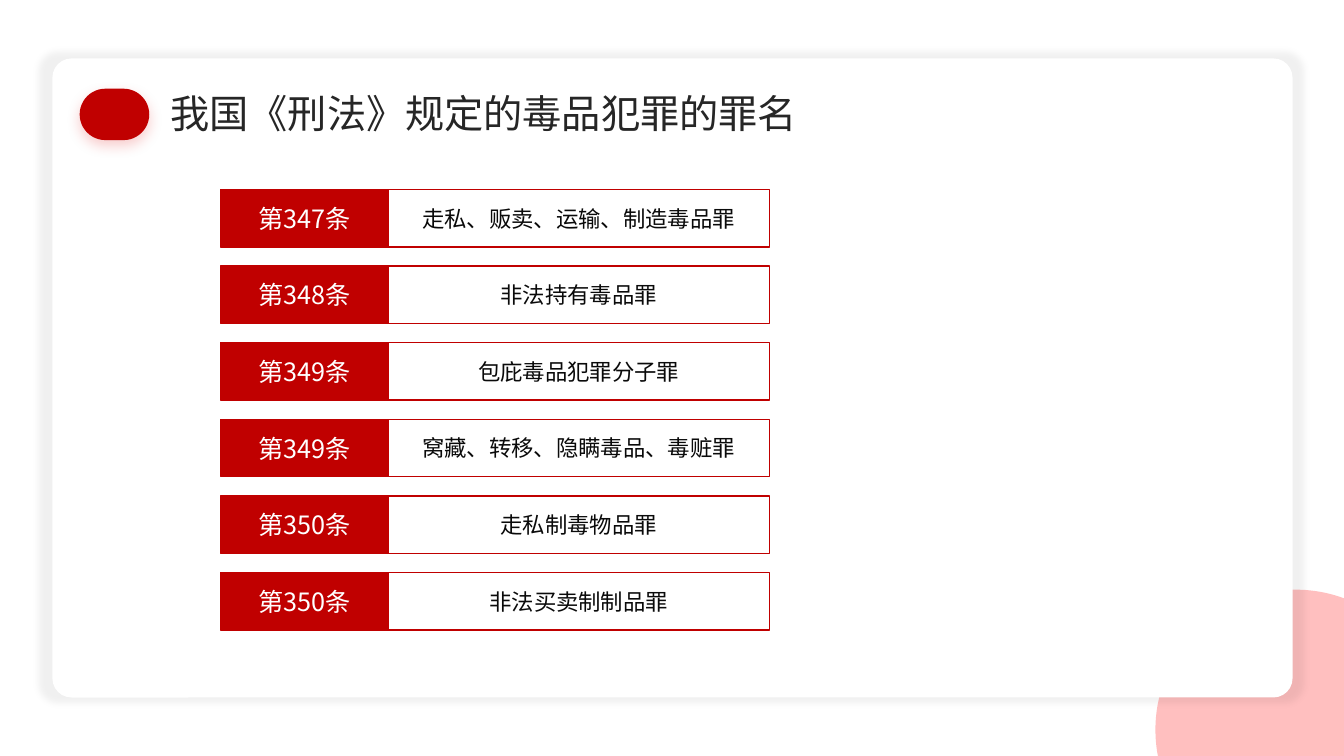
"""Build the slide listing drug offences under the Criminal Law."""
from math import acos, asin, cos, pi, sin

from lxml.etree import SubElement
from pptx import Presentation
from pptx.dml.color import RGBColor
from pptx.enum.shapes import MSO_SHAPE as Shape
from pptx.enum.text import MSO_ANCHOR as Anchor, MSO_AUTO_SIZE as AutoSize, PP_ALIGN as Align
from pptx.oxml import parse_xml
from pptx.oxml.ns import nsdecls, qn
from pptx.util import Inches, Pt

RED = RGBColor(0xC0, 0x00, 0x00)
PINK = RGBColor(0xFF, 0xBF, 0xBF)
WHITE = RGBColor(0xFF, 0xFF, 0xFF)
INK = RGBColor(0x0A, 0x0A, 0x0A)
TITLE_INK = RGBColor(0x26, 0x26, 0x26)
FONT = "Noto Sans CJK SC"
SLIDE_WIDTH, SLIDE_HEIGHT = 13.33, 7.5

LIST_LEFT, LIST_TOP = 2.19, 1.88
ARTICLE_WIDTH, OFFENCE_WIDTH = 1.66, 3.78
ROW_HEIGHT, ROW_PITCH = 0.57, 0.76
OFFENCES = [
    ("第347条", "走私、贩卖、运输、制造毒品罪"),
    ("第348条", "非法持有毒品罪"),
    ("第349条", "包庇毒品犯罪分子罪"),
    ("第349条", "窝藏、转移、隐瞒毒品、毒赃罪"),
    ("第350条", "走私制毒物品罪"),
    ("第350条", "非法买卖制制品罪"),
]


def add_box(kind, left, top, width, height, fill):
    """Add a flat, borderless preset shape."""
    shape = slide.shapes.add_shape(
        kind, Inches(left), Inches(top), Inches(width), Inches(height))
    shape.shadow.inherit = False
    shape.fill.solid()
    shape.fill.fore_color.rgb = fill
    shape.line.fill.background()
    return shape


def add_run(paragraph, text, size, color):
    """Add a run with the same Latin and East Asian font."""
    run = paragraph.add_run()
    run.text = text
    run.font.size = Pt(size)
    run.font.bold = False
    run.font.name = FONT
    run.font.color.rgb = color
    SubElement(run.font._element, qn("a:ea")).set("typeface", FONT)


presentation = Presentation()
presentation.slide_width = Inches(SLIDE_WIDTH)
presentation.slide_height = Inches(SLIDE_HEIGHT)
slide = presentation.slides.add_slide(presentation.slide_layouts[5])

center_x, center_y, radius = 12.85, 7.24, 1.39
start = pi + asin((SLIDE_HEIGHT - center_y) / radius)
end = acos((SLIDE_WIDTH - center_x) / radius)
angles = [start + (end - start) * step / 60 for step in range(61)]
outline = [(center_x + radius * cos(angle), center_y - radius * sin(angle)) for angle in angles]
outline.append((SLIDE_WIDTH, SLIDE_HEIGHT))
points = [(Inches(x), Inches(y)) for x, y in outline]
builder = slide.shapes.build_freeform(*points[0])
builder.add_line_segments(points[1:], close=True)
corner_disc = builder.convert_to_shape()
corner_disc.shadow.inherit = False
corner_disc.fill.solid()
corner_disc.fill.fore_color.rgb = PINK
corner_disc.line.fill.background()

card = add_box(Shape.ROUNDED_RECTANGLE, 0.52, 0.58, 12.3, 6.34, WHITE)
card.adjustments[0] = 0.03
title_marker = add_box(Shape.ROUNDED_RECTANGLE, 0.79, 0.88, 0.69, 0.51, RED)
title_marker.adjustments[0] = 0.5

for shape, color, alpha, blur, distance, scale in [
    (card, "000000", 5, 5, 0, 102),
    (title_marker, "DE0000", 20, 10, 4, 100),
]:
    effects = shape._element.spPr.find(qn("a:effectLst"))
    effects.append(parse_xml(
        f'<a:outerShdw {nsdecls("a")} blurRad="{Pt(blur)}" dist="{Pt(distance)}" '
        f'dir="5400000" sx="{scale * 1000}" sy="{scale * 1000}" algn="ctr" rotWithShape="0">'
        f'<a:srgbClr val="{color}"><a:alpha val="{alpha * 1000}"/></a:srgbClr></a:outerShdw>'))

for row, (article, offence) in enumerate(OFFENCES):
    top = LIST_TOP + row * ROW_PITCH
    for text, left, width, fill, size, color in [
        (article, LIST_LEFT, ARTICLE_WIDTH, RED, 18, WHITE),
        (offence, LIST_LEFT + ARTICLE_WIDTH, OFFENCE_WIDTH, WHITE, 16, INK),
    ]:
        cell = add_box(Shape.RECTANGLE, left, top, width, ROW_HEIGHT, fill)
        cell.line.color.rgb = RED
        cell.line.width = Pt(1)
        cell.text_frame.word_wrap = True
        cell.text_frame.vertical_anchor = Anchor.MIDDLE
        paragraph = cell.text_frame.paragraphs[0]
        paragraph.alignment = Align.CENTER
        add_run(paragraph, text, size, color)

title = slide.shapes.title
title.left, title.top = Inches(1.59), Inches(0.84)
title.width, title.height = Inches(6.48), Inches(0.57)
title.text_frame.word_wrap = False
title.text_frame.auto_size = AutoSize.SHAPE_TO_FIT_TEXT
title.text_frame.vertical_anchor = Anchor.TOP
title_paragraph = title.text_frame.paragraphs[0]
title_paragraph.alignment = Align.LEFT
add_run(title_paragraph, "我国《刑法》规定的毒品犯罪的罪名", 28, TITLE_INK)
slide.shapes._spTree.append(title._element)

presentation.save("out.pptx")
